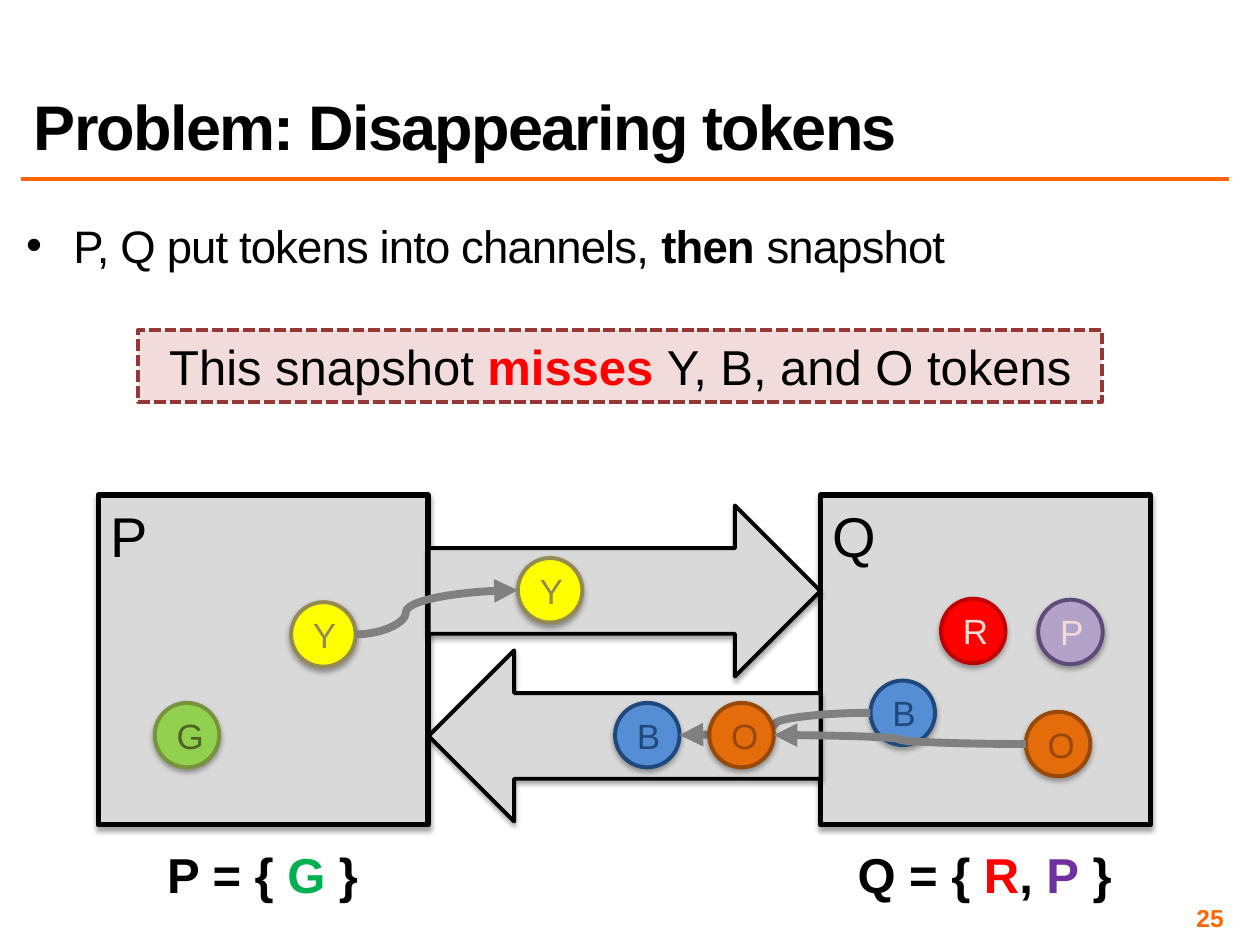
import dataclasses

import lxml.etree
import pptx
import pptx.dml.color
import pptx.enum.dml
import pptx.enum.shapes
import pptx.enum.text
import pptx.oxml.ns
import pptx.util

Cm = pptx.util.Cm
Pt = pptx.util.Pt
Shapes = pptx.enum.shapes.MSO_SHAPE
Connectors = pptx.enum.shapes.MSO_CONNECTOR
Align = pptx.enum.text.PP_ALIGN
Anchor = pptx.enum.text.MSO_ANCHOR
AutoSize = pptx.enum.text.MSO_AUTO_SIZE
TOKEN_SIZE = 1.3


@dataclasses.dataclass(frozen=True)
class Theme:
    font: str = "Arial"
    ink: str = "000000"
    accent: str = "FF6600"
    panel: str = "D9D9D9"
    link: str = "808080"
    alert: str = "FF0000"
    notice_fill: str = "F2DCDB"
    notice_line: str = "953735"
    green: str = "00B050"
    purple: str = "7030A0"
    title_size: int = 36
    process_size: int = 32
    label_size: int = 28
    body_size: int = 26
    token_size: int = 20
    number_size: int = 14
    tokens: tuple = (
        ("R", ("FF0000", "C00000", "F2DCDB")),
        ("G", ("92D050", "77933C", "4F6228")),
        ("B", ("558ED5", "1F497D", "1F497D")),
        ("O", ("E46C0A", "984807", "984807")),
        ("P", ("B3A2C7", "604A7B", "F2DCDB")),
        ("Y", ("FFFF00", "948A54", "948A54")),
    )


def rgb(value):
    return pptx.dml.color.RGBColor.from_string(value)


def add_xml(parent, tag, **attributes):
    return lxml.etree.SubElement(parent, pptx.oxml.ns.qn(tag), attributes)


def write_run(paragraph, text, *, font, size, color, bold=False, spacing=0):
    run = paragraph.add_run()
    run.text = text
    run.font.name = font
    run.font.size = Pt(size)
    run.font.bold = bold
    run.font.color.rgb = rgb(color)
    if spacing:
        run.font._element.set("spc", str(int(spacing * 100)))


class SlideBuilder:
    def __init__(self, slide, theme):
        self.slide = slide
        self.theme = theme

    def fill_text(self, shape, runs, size, align=Align.LEFT, anchor=Anchor.TOP,
                  inset=None, wrap=True, **defaults):
        frame = shape.text_frame
        frame.word_wrap = wrap
        frame.auto_size = AutoSize.NONE
        frame.vertical_anchor = anchor
        if inset is not None:
            frame.margin_left = frame.margin_right = Cm(inset)
            frame.margin_top = frame.margin_bottom = Cm(inset)
        paragraph = frame.paragraphs[0]
        paragraph.alignment = align
        base = {"font": self.theme.font, "size": size, "color": self.theme.ink}
        for text, changes in runs:
            write_run(paragraph, text, **{**base, **defaults, **changes})
        return paragraph

    def title(self, text):
        title = self.slide.shapes.title
        title.left, title.top = Cm(0.43), Cm(0.43)
        title.width, title.height = Cm(24.33), Cm(2.97)
        paragraph = self.fill_text(title, [(text, {})], self.theme.title_size,
                                   anchor=Anchor.BOTTOM, bold=True, spacing=-1)
        paragraph.line_spacing = 0.8

    def text(self, left, top, width, height, runs, size, **options):
        box = self.slide.shapes.add_textbox(Cm(left), Cm(top), Cm(width), Cm(height))
        return self.fill_text(box, runs, size, **options)

    def bullet(self, left, top, width, height, runs):
        size = self.theme.body_size
        paragraph = self.text(left, top, width, height, runs, size, inset=0.1, spacing=-0.5)
        paragraph.line_spacing = 0.8
        paragraph.space_before = Pt(size * 0.2)
        properties = paragraph._p.get_or_add_pPr()
        properties.set("marL", str(Cm(0.95)))
        properties.set("indent", str(Cm(-0.95)))
        add_xml(properties, "a:buFont", typeface=self.theme.font)
        add_xml(properties, "a:buChar", char="•")

    def shape(self, kind, left, top, width, height, fill, line, weight, shadow=True):
        shape = self.slide.shapes.add_shape(kind, Cm(left), Cm(top), Cm(width), Cm(height))
        shape.fill.solid()
        shape.fill.fore_color.rgb = rgb(fill)
        shape.line.color.rgb = rgb(line)
        shape.line.width = Pt(weight)
        shape.shadow.inherit = False
        if shadow:
            effects = shape.element.spPr.find(pptx.oxml.ns.qn("a:effectLst"))
            outer = add_xml(effects, "a:outerShdw", blurRad=str(Pt(3.1)),
                            dist=str(Pt(1.8)), dir="5400000", rotWithShape="0")
            color = add_xml(outer, "a:srgbClr", val=self.theme.ink)
            add_xml(color, "a:alpha", val="35000")
        return shape

    def process(self, name, left):
        shape = self.shape(Shapes.RECTANGLE, left, 9.98, 6.65, 6.65,
                           self.theme.panel, self.theme.ink, 3)
        self.fill_text(shape, [(name, {})], self.theme.process_size)

    def channel(self, top, rotation=0):
        shape = self.shape(Shapes.RIGHT_ARROW, 8.64, top, 7.9, 3.45,
                           self.theme.panel, self.theme.ink, 2.25)
        shape.rotation = rotation

    def token(self, name, left, top):
        fill, line, color = dict(self.theme.tokens)[name]
        shape = self.shape(Shapes.OVAL, left, top, TOKEN_SIZE, TOKEN_SIZE, fill, line, 2.25)
        self.fill_text(shape, [(name, {})], self.theme.token_size, color=color,
                       align=Align.CENTER, anchor=Anchor.MIDDLE)
        return shape

    def notice(self, left, top, width, height, runs):
        shape = self.shape(Shapes.RECTANGLE, left, top, width, height,
                           self.theme.notice_fill, self.theme.notice_line, 2.25, shadow=False)
        shape.line.dash_style = pptx.enum.dml.MSO_LINE.SQUARE_DOT
        self.fill_text(shape, runs, self.theme.label_size, align=Align.CENTER)

    def connector(self, kind, start, end, color, weight):
        connector = self.slide.shapes.add_connector(kind, *start, *end)
        connector.line.color.rgb = rgb(color)
        connector.line.width = Pt(weight)
        add_xml(connector.element.spPr, "a:effectLst")
        return connector

    def move_arrow(self, source, target, bend=0.5):
        rightward = target.left > source.left
        start = (source.left + source.width * rightward, source.top + source.height // 2)
        end = (target.left + target.width * (not rightward), target.top + target.height // 2)
        connector = self.connector(Connectors.CURVE, start, end, self.theme.link, 4.5)
        properties = connector.element.spPr
        add_xml(properties.find(pptx.oxml.ns.qn("a:ln")), "a:tailEnd", type="triangle")
        if bend != 0.5:
            geometry = properties.find(pptx.oxml.ns.qn("a:prstGeom"))
            guides = geometry.find(pptx.oxml.ns.qn("a:avLst"))
            add_xml(guides, "a:gd", name="adj1", fmla=f"val {round(bend * 100000)}")


def main():
    presentation = pptx.Presentation()
    presentation.slide_width, presentation.slide_height = Cm(25.4), Cm(19.05)
    slide = presentation.slides.add_slide(presentation.slide_layouts[5])
    theme = Theme()
    builder = SlideBuilder(slide, theme)

    builder.title("Problem: Disappearing tokens")
    builder.connector(Connectors.STRAIGHT, (Cm(0.43), Cm(3.61)), (Cm(24.77), Cm(3.61)),
                      theme.accent, 2)
    builder.bullet(0.43, 4.5, 24.33, 1.8, [
        ("P, Q put tokens into channels, ", {}), ("then", {"bold": True}), (" snapshot", {})])
    builder.text(18.85, 18.21, 5.92, 0.58, [("25", {})], theme.number_size, inset=0.1,
                 align=Align.RIGHT, anchor=Anchor.MIDDLE, color=theme.accent, bold=True)

    builder.process("P", 1.98)
    builder.process("Q", 16.54)
    builder.channel(10.19)
    builder.channel(13.11, rotation=180)

    builder.token("R", 18.97, 12.07)
    builder.token("G", 3.12, 14.17)
    builder.token("P", 20.93, 12.09)
    moves = (
        ("Y", (5.87, 12.14), (10.44, 11.25), 0.31),
        ("B", (17.55, 13.72), (12.4, 14.17), 0.5),
        ("O", (20.68, 14.35), (14.3, 14.17), 0.5),
    )
    sources = [builder.token(name, *start) for name, start, end, bend in moves]
    for source, (name, start, end, bend) in zip(sources, moves):
        builder.move_arrow(source, builder.token(name, *end), bend)

    states = (
        (3.1, 4.39, [("P = { ", {}), ("G", {"color": theme.green}), (" }", {})]),
        (17.02, 5.66, [("Q = { ", {}), ("R", {"color": theme.alert}), (", ", {}),
                       ("P", {"color": theme.purple}), (" }", {})]),
    )
    for left, width, runs in states:
        builder.text(left, 16.89, width, 1.45, runs, theme.label_size,
                     align=Align.CENTER, wrap=False, bold=True)

    builder.notice(2.79, 6.65, 19.43, 1.45, [
        ("This snapshot ", {}), ("misses ", {"color": theme.alert, "bold": True}),
        ("Y, B, and O tokens", {})])
    presentation.save("out.pptx")


if __name__ == "__main__":
    main()
